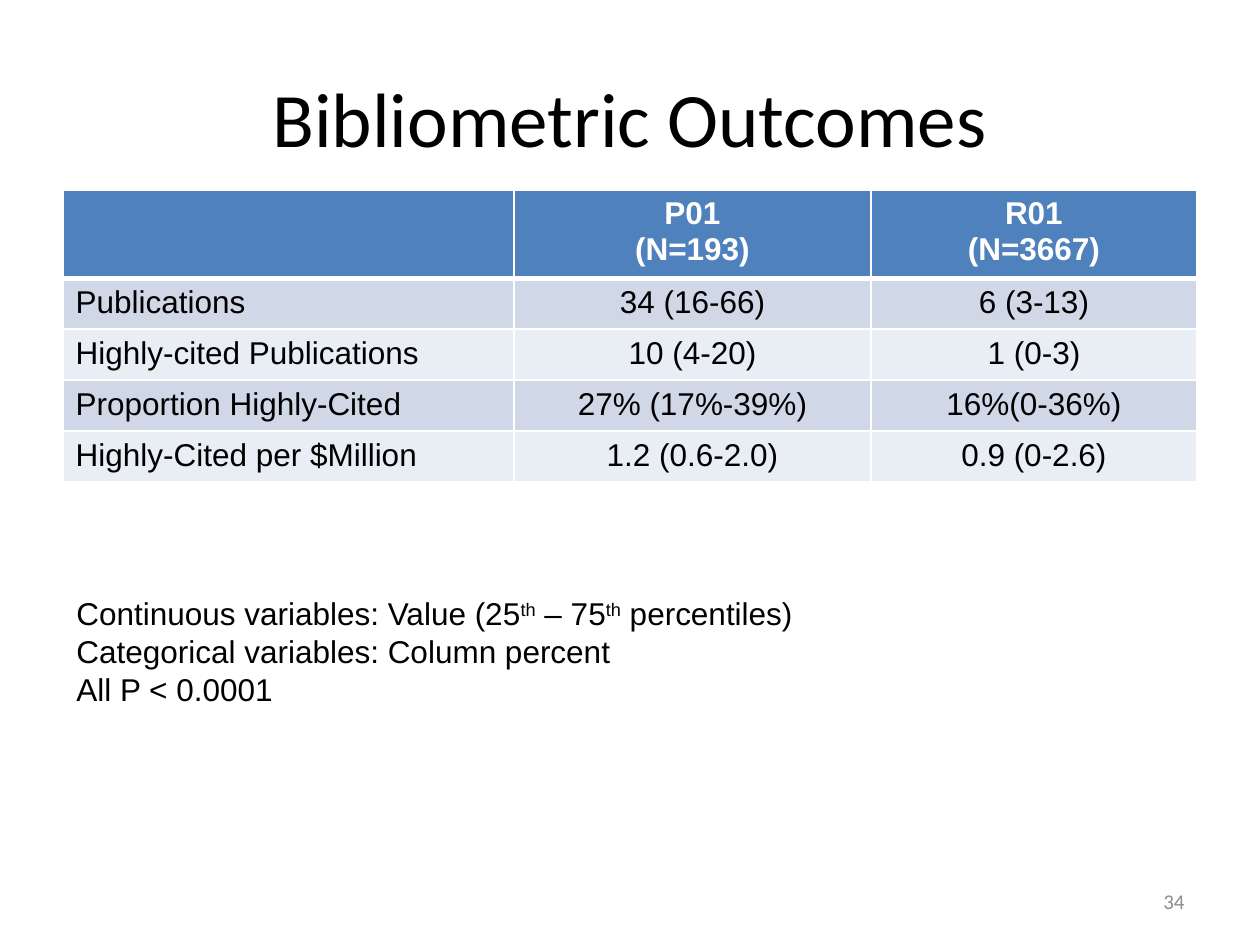
from lxml.etree import SubElement
from pptx import Presentation
from pptx.dml.color import RGBColor
from pptx.enum.text import MSO_ANCHOR as ANCHOR, PP_ALIGN as ALIGN
from pptx.oxml.ns import qn
from pptx.util import Emu, Pt

SCALE = 914400 / 126


def px(n):
    return Emu(round(n * SCALE))


def rgb(value):
    return RGBColor.from_string(value)


class Deck:
    black, white, grey = "000000", "FFFFFF", "8C8C8C"
    header, bands = "4F81BD", ("D0D8E8", "E9EDF4")
    head_font, body_font = "Calibri", "Arial"

    def __init__(self, width, height):
        self.prs = Presentation()
        self.prs.slide_width, self.prs.slide_height = px(width), px(height)
        self.s = self.prs.slides.add_slide(self.prs.slide_layouts[6])

    def fill_text(self, tf, lines, size, font, color, align, bold=False):
        for i, line in enumerate(lines):
            p = tf.paragraphs[0] if i == 0 else tf.add_paragraph()
            p.alignment = align
            p.font.size, p.font.name, p.font.bold = Pt(size), font, bold
            p.font.color.rgb = rgb(color)
            for j, part in enumerate(line.split("^")):
                r = p.add_run()
                r.text = part
                if j % 2:
                    r._r.get_or_add_rPr().set("baseline", "30000")

    def text(self, box, lines, size, font, color, align=ALIGN.LEFT,
             anchor=ANCHOR.TOP, wrap=True):
        tf = self.s.shapes.add_textbox(*map(px, box)).text_frame
        tf.word_wrap, tf.vertical_anchor = wrap, anchor
        self.fill_text(tf, lines, size, font, color, align)

    def border(self, cell, side, width):
        ln = SubElement(cell._tc.get_or_add_tcPr(), qn(f"a:ln{side}"), w=str(Pt(width)))
        fill = SubElement(ln, qn("a:solidFill"))
        SubElement(fill, qn("a:srgbClr"), val=self.white)

    def table(self, left, top, widths, heights, rows):
        table = self.s.shapes.add_table(
            len(rows), len(widths), px(left), px(top),
            px(sum(widths)), px(sum(heights))).table
        for col, width in zip(table.columns, widths):
            col.width = px(width)
        for row, height in zip(table.rows, heights):
            row.height = px(height)
        for i, row in enumerate(rows):
            is_header = i == 0
            for j, value in enumerate(row):
                cell = table.cell(i, j)
                for side in "LRTB":
                    thick = (i, side) in ((0, "B"), (1, "T"))
                    self.border(cell, side, 3 if thick else 1)
                cell.fill.solid()
                cell.fill.fore_color.rgb = rgb(
                    self.header if is_header else self.bands[(i - 1) % 2])
                if value:
                    self.fill_text(cell.text_frame, value.split("\n"), 18, self.body_font,
                                   self.white if is_header else self.black,
                                   ALIGN.CENTER if is_header or j else ALIGN.LEFT, is_header)


def main():
    deck = Deck(1260, 945)
    deck.text((63, 38, 1134, 157), ["Bibliometric Outcomes"], 44, deck.head_font,
              deck.black, ALIGN.CENTER, ANCHOR.MIDDLE)
    deck.table(63, 190, (451, 357, 326), (82, 51, 51, 51, 51), (
        ("", "P01\n(N=193)", "R01\n(N=3667)"),
        ("Publications", "34 (16-66)", "6 (3-13)"),
        ("Highly-cited Publications", "10 (4-20)", "1 (0-3)"),
        ("Proportion Highly-Cited", "27% (17%-39%)", "16%(0-36%)"),
        ("Highly-Cited per $Million", "1.2 (0.6-2.0)", "0.9 (0-2.6)"),
    ))
    deck.text((903, 876, 294, 50), ["34"], 12, deck.head_font, deck.grey,
              ALIGN.RIGHT, ANCHOR.MIDDLE)
    deck.text((64, 588, 753, 127), (
        "Continuous variables: Value (25^th^ – 75^th^ percentiles)",
        "Categorical variables: Column percent",
        "All P < 0.0001",
    ), 18, deck.body_font, deck.black, wrap=False)
    deck.prs.save("out.pptx")


if __name__ == "__main__":
    main()
